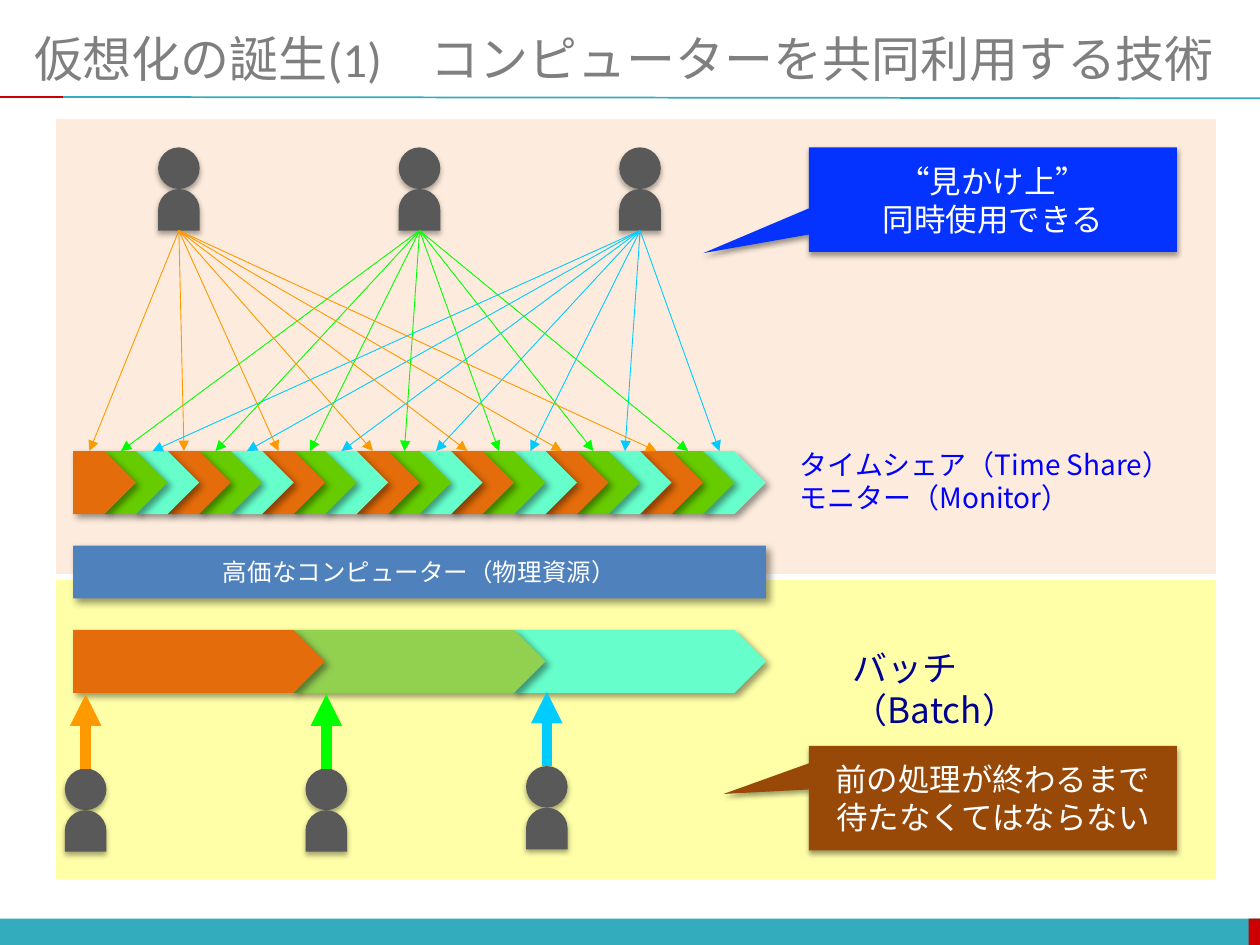
from dataclasses import dataclass

from lxml.etree import SubElement
from pptx import Presentation
from pptx.dml.color import RGBColor
from pptx.enum.shapes import MSO_CONNECTOR, MSO_SHAPE
from pptx.enum.text import MSO_ANCHOR, PP_ALIGN
from pptx.oxml.ns import qn
from pptx.util import Inches, Pt


@dataclass(frozen=True)
class Theme:
    """Colours, fonts, type sizes and shadows of the slide."""

    teal: str = "33ACBD"
    red: str = "CC0000"
    white: str = "FFFFFF"
    title: str = "7F7F7F"
    person: str = "595959"
    computer: str = "4F81BD"
    share_panel: str = "FDEADA"
    batch_panel: str = "FFFF99"
    share_callout: str = "0432FF"
    batch_callout: str = "984807"
    share_label: str = "0000FF"
    batch_label: str = "000090"
    arrows: tuple = ("FF9900", "00FF00", "00CCFF")
    slices: tuple = ("E46C0A", "66CC00", "66FFCC")
    jobs: tuple = ("E46C0A", "92D050", "66FFCC")
    latin: str = "Calibri"
    japanese: str = "Noto Sans CJK JP"
    title_size: int = 28
    batch_size: int = 20
    callout_size: int = 18
    share_size: int = 16
    computer_size: int = 14
    block_shadow: tuple = (40, 4, 3, 45)
    person_shadow: tuple = (35, 3.1, 1.8, 90)
    callout_shadow: tuple = (38, 3.1, 1.6, 90)


THEME = Theme()
LEFT = 0.58
SLICE_STEP = 0.25
SLICE_COUNT = 21
JOB_STEP = 1.75
BAR_HEIGHT = 0.5
PERSON = 0.33
SLICE_TOP = 3.58


def rgb(value):
    """Turn a hex string into a colour."""
    return RGBColor.from_string(value)


def add_shadow(shape, shadow):
    """Give a shape an outer shadow of opacity, blur, distance and angle."""
    opacity, blur, distance, angle = shadow
    effects = shape.element.spPr.find(qn("a:effectLst"))
    outer = SubElement(effects, qn("a:outerShdw"), blurRad=str(Pt(blur)),
                       dist=str(Pt(distance)), dir=str(angle * 60000), rotWithShape="0")
    color = SubElement(outer, qn("a:srgbClr"), val="000000")
    SubElement(color, qn("a:alpha"), val=str(opacity * 1000))


def add_block(page, kind, left, top, width, height, color, shadow=None):
    """Add a filled shape without an outline."""
    shape = page.shapes.add_shape(kind, Inches(left), Inches(top), Inches(width), Inches(height))
    shape.fill.solid()
    shape.fill.fore_color.rgb = rgb(color)
    shape.line.fill.background()
    shape.shadow.inherit = False
    if shadow:
        add_shadow(shape, shadow)
    return shape


def add_panel(page, top, height, color, opacity):
    """Add a translucent background panel with a white border."""
    panel = add_block(page, MSO_SHAPE.RECTANGLE, 0.42, top, 9.25, height, color)
    panel.line.color.rgb = rgb(THEME.white)
    panel.line.width = Pt(3)
    fill_color = panel.element.spPr.find(qn("a:solidFill")).find(qn("a:srgbClr"))
    SubElement(fill_color, qn("a:alpha"), val=str(opacity * 1000))


def add_line(page, start, end, color, width, arrow=False):
    """Add a straight line, with an arrowhead at its start if wanted."""
    line = page.shapes.add_connector(MSO_CONNECTOR.STRAIGHT, *map(Inches, start + end))
    line.line.color.rgb = rgb(color)
    line.line.width = Pt(width)
    if arrow:
        SubElement(line.line._get_or_add_ln(), qn("a:headEnd"), type="triangle")
    SubElement(line.element.spPr, qn("a:effectLst"))


def write_text(shape, text, size, color, latin=THEME.japanese, align=PP_ALIGN.LEFT,
               anchor=MSO_ANCHOR.MIDDLE):
    """Fill a shape with text and format every run."""
    frame = shape.text_frame
    frame.text = text
    frame.word_wrap = True
    frame.vertical_anchor = anchor
    for para in frame.paragraphs:
        para.alignment = align
        para.line_spacing = Pt(size * 1.2)
        for span in para.runs:
            span.font.size = Pt(size)
            span.font.name = latin
            span.font.color.rgb = rgb(color)
            SubElement(span.font._element, qn("a:ea"), typeface=THEME.japanese)


def add_label(page, left, top, width, height, text, size, color):
    """Add a text box and return its frame."""
    box = page.shapes.add_textbox(Inches(left), Inches(top), Inches(width), Inches(height))
    write_text(box, text, size, color, anchor=MSO_ANCHOR.TOP)
    return box.text_frame


def add_callout(page, top, text, color, tip):
    """Add a rectangular callout pointing at its tip."""
    callout = add_block(page, MSO_SHAPE.RECTANGULAR_CALLOUT, 6.42, top, 2.92, 0.83,
                        color, THEME.callout_shadow)
    callout.adjustments[0], callout.adjustments[1] = tip
    write_text(callout, text, THEME.callout_size, THEME.white, align=PP_ALIGN.CENTER)


def add_person(page, center, top):
    """Add a person made of a head and a body."""
    left = center - PERSON / 2
    add_block(page, MSO_SHAPE.OVAL, left, top, PERSON, PERSON, THEME.person, THEME.person_shadow)
    body = add_block(page, MSO_SHAPE.FLOWCHART_DELAY, left, top + PERSON, PERSON, PERSON,
                     THEME.person, THEME.person_shadow)
    body.rotation = 270


def add_bars(page, top, step, width, colors):
    """Add overlapping pentagon bars, the leftmost in front."""
    for index in reversed(range(len(colors))):
        add_block(page, MSO_SHAPE.PENTAGON, LEFT + step * index, top, width, BAR_HEIGHT,
                  colors[index], THEME.block_shadow)


def add_frame(page):
    """Add the footer bar and the rule under the title."""
    add_block(page, MSO_SHAPE.RECTANGLE, 0, 7.29, 10, 0.22, THEME.teal)
    add_block(page, MSO_SHAPE.RECTANGLE, 9.91, 7.29, 0.1, 0.22, THEME.red)
    add_line(page, (0.5, 0.77), (10, 0.78), THEME.teal, 1)
    add_line(page, (0, 0.77), (0.5, 0.77), THEME.red, 1)


def add_title(page, text):
    """Place and format the title placeholder."""
    title = page.shapes.title
    title.left, title.top, title.width, title.height = map(Inches, (0.17, 0.17, 9.83, 0.58))
    write_text(title, text, THEME.title_size, THEME.title, latin=THEME.latin)


def add_time_share(page):
    """Add the upper half: users sharing small time slices."""
    users = (1.42, 3.33, 5.08)
    add_panel(page, 0.92, 3.67, THEME.share_panel, 90)
    add_bars(page, SLICE_TOP, SLICE_STEP, BAR_HEIGHT, THEME.slices * (SLICE_COUNT // 3))
    for center in users:
        add_person(page, center, 1.17)
    for index in range(SLICE_COUNT):
        user = index % len(users)
        add_line(page, (0.71 + SLICE_STEP * index, SLICE_TOP), (users[user], 1.83),
                 THEME.arrows[user], 0.5, arrow=True)
    add_label(page, 6.25, 3.5, 3.25, 0.64, "タイムシェア（Time Share）\nモニター（Monitor）",
              THEME.share_size, THEME.share_label)
    add_callout(page, 1.17, "“見かけ上”\n同時使用できる", THEME.share_callout, (-0.787, 0.511))


def add_batch(page):
    """Add the lower half: users waiting for whole jobs."""
    add_panel(page, 4.58, 2.42, THEME.batch_panel, 85)
    add_bars(page, 5, JOB_STEP, 2, THEME.jobs)
    for center, top, color in zip((0.68, 2.59, 4.34), (6.1, 6.1, 6.08), THEME.arrows):
        add_person(page, center, top)
        add_line(page, (center, top - 0.59), (center, top), color, 6, arrow=True)
    computer = add_block(page, MSO_SHAPE.RECTANGLE, LEFT, 4.33, 5.5, 0.42,
                         THEME.computer, THEME.block_shadow)
    write_text(computer, "高価なコンピューター（物理資源）", THEME.computer_size, THEME.white,
               align=PP_ALIGN.CENTER)
    label = add_label(page, 6.67, 5.08, 2.38, 0.44, "バッチ（Batch）",
                      THEME.batch_size, THEME.batch_label)
    label.margin_right = Inches(0.5)
    add_callout(page, 5.92, "前の処理が終わるまで\n待たなくてはならない",
                THEME.batch_callout, (-0.732, -0.04))


def main():
    """Build the slide and save it."""
    deck = Presentation()
    deck.slide_width, deck.slide_height = Inches(10), Inches(7.5)
    page = deck.slides.add_slide(deck.slide_layouts[5])
    add_frame(page)
    add_time_share(page)
    add_title(page, "仮想化の誕生(1)　コンピューターを共同利用する技術")
    add_batch(page)
    deck.save("out.pptx")


if __name__ == "__main__":
    main()
